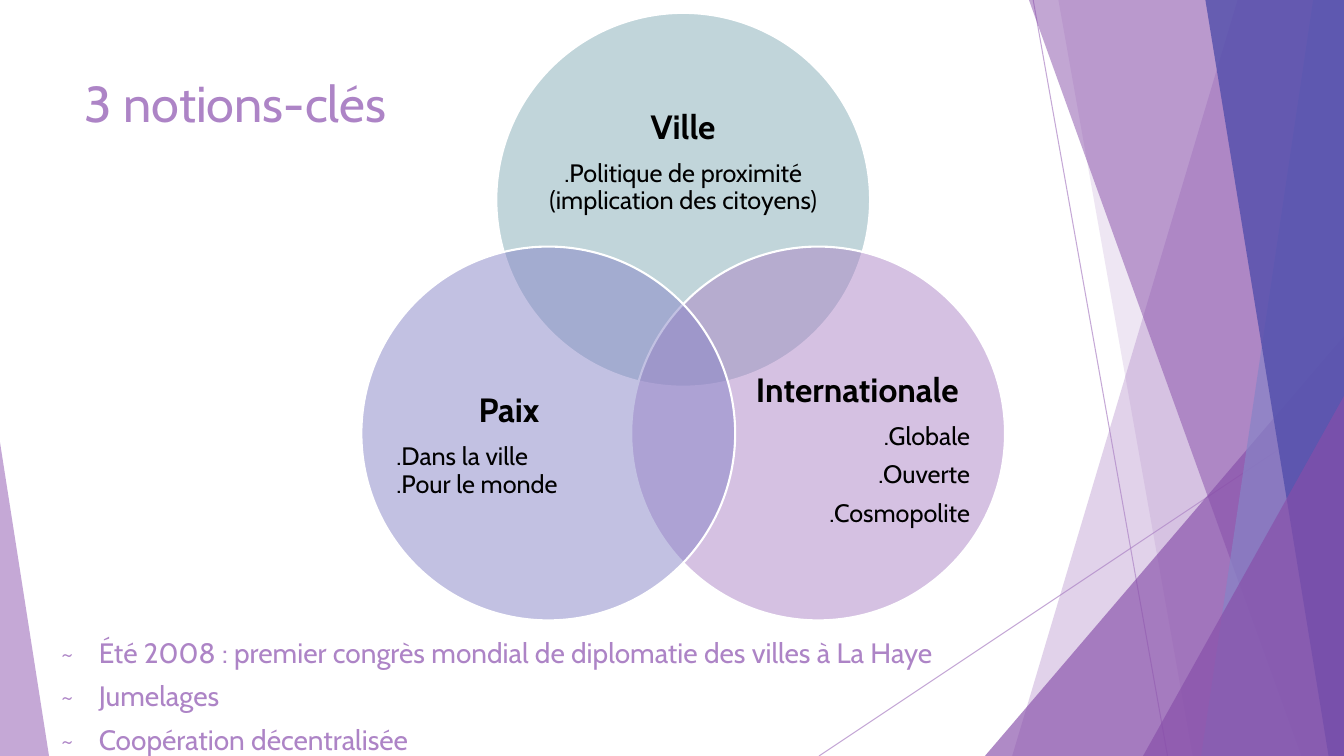
from dataclasses import dataclass
from math import cos, radians, sin

from lxml.etree import SubElement
from pptx import Presentation
from pptx.dml.color import RGBColor
from pptx.enum.shapes import MSO_CONNECTOR as Connector, MSO_SHAPE as Shape
from pptx.enum.text import MSO_ANCHOR as Anchor, PP_ALIGN as Align
from pptx.oxml.ns import qn
from pptx.util import Pt

WIDTH, HEIGHT = 960, 540


@dataclass(frozen=True)
class Theme:
    font: str = "Cabin"
    lilac: str = "AD84C6"
    purple: str = "874EA9"
    periwinkle: str = "8784C7"
    indigo: str = "524EAB"
    teal: str = "84ACB6"
    white: str = "FFFFFF"
    black: str = "000000"
    title: int = 36
    heading: int = 24
    bullet: int = 20
    detail: int = 18


@dataclass(frozen=True)
class Facet:
    points: list[tuple[float, float]]
    color: str
    opacity: int


@dataclass(frozen=True)
class Notion:
    heading: str
    details: list[str]
    color: str
    angle: float
    dx: float
    dy: float
    width: float
    align: Align


T = Theme()


def band(top: float, bottom: float) -> list[tuple[float, float]]:
    return [(top, 0), (WIDTH, 0), (WIDTH, HEIGHT), (bottom, HEIGHT)]


def corner(left: float, top: float) -> list[tuple[float, float]]:
    return [(left, HEIGHT), (WIDTH, top), (WIDTH, HEIGHT)]


RAYS = [((738, 0), (834, HEIGHT)), ((WIDTH, 290), (585, HEIGHT))]
FACETS = [
    Facet(band(884, 723), T.lilac, 36),
    Facet(band(756, 852), T.lilac, 20),
    Facet(corner(703.5, 240), T.purple, 66),
    Facet(band(735, 929.5), T.purple, 50),
    Facet(band(938, 858), T.periwinkle, 70),
    Facet(band(861, 949), T.indigo, 80),
    Facet(corner(816.5, 283), T.purple, 66),
    Facet([(0, HEIGHT), (0, 316), (35, HEIGHT)], T.lilac, 70),
]

VENN_X, VENN_Y, VENN_REACH, DIAMETER = 488, 254, 111.3, 267
LABEL_HEIGHT = 146
NOTIONS = [
    Notion("Ville", [".Politique de proximité (implication des citoyens)"],
           T.teal, -90, 0, -26.5, 196, Align.CENTER),
    Notion("Internationale", [".Globale", ".Ouverte", ".Cosmopolite"],
           T.lilac, 30, 28, 12, 161, Align.RIGHT),
    Notion("Paix", [".Dans la ville\n.Pour le monde"],
           T.periwinkle, 150, -28, 9, 161, Align.LEFT),
]
BULLETS = [
    "Été 2008 : premier congrès mondial de diplomatie des villes à La Haye",
    "Jumelages",
    "Coopération décentralisée",
]


def set_opacity(fill, percent: int) -> None:
    color = fill.find(".//" + qn("a:srgbClr"))
    SubElement(color, qn("a:alpha"), val=str(percent * 1000))


def paint(s, color: str, opacity: int) -> None:
    s.shadow.inherit = False
    s.fill.solid()
    s.fill.fore_color.rgb = RGBColor.from_string(color)
    set_opacity(s._element.spPr.find(qn("a:solidFill")), opacity)


def add_ray(shapes, start: tuple[float, float], end: tuple[float, float]) -> None:
    s = shapes.add_connector(Connector.STRAIGHT, *map(Pt, start + end))
    s.line.width = Pt(0.75)
    s.line.color.rgb = RGBColor.from_string(T.lilac)
    set_opacity(s.line._ln, 70)
    SubElement(s._element.spPr, qn("a:effectLst"))


def add_facet(shapes, facet: Facet) -> None:
    first, *rest = [(Pt(x), Pt(y)) for x, y in facet.points]
    builder = shapes.build_freeform(*first)
    builder.add_line_segments(rest, close=True)
    s = builder.convert_to_shape()
    paint(s, facet.color, facet.opacity)
    s.line.fill.background()


def add_frame(shapes, left: float, top: float, width: float, height: float,
              margins: tuple[float, float] = (0, 0), anchor: Anchor = Anchor.TOP):
    tf = shapes.add_textbox(Pt(left), Pt(top), Pt(width), Pt(height)).text_frame
    tf.word_wrap = True
    tf.vertical_anchor = anchor
    tf.margin_left = tf.margin_right = Pt(margins[0])
    tf.margin_top = tf.margin_bottom = Pt(margins[1])
    return tf


def write(tf, text: str, *, size: int, color: str, bold: bool = False,
          align: Align = Align.LEFT, spacing: float = 1.0, after: float = 0,
          bullet: str = "", indent: float = 0) -> None:
    p = tf.paragraphs[0]
    if p.runs:
        p = tf.add_paragraph()
    p.alignment, p.line_spacing, p.space_after = align, spacing, Pt(after)
    for i, line in enumerate(text.split("\n")):
        if i:
            p.add_line_break()
        r = p.add_run()
        r.text = line
        r.font.name, r.font.size, r.font.bold = T.font, Pt(size), bold
        r.font.color.rgb = RGBColor.from_string(color)
    if bullet:
        pPr = p._p.get_or_add_pPr()
        pPr.set("marL", str(Pt(indent)))
        pPr.set("indent", str(-Pt(indent)))
        SubElement(pPr, qn("a:buFont"), typeface=T.font)
        SubElement(pPr, qn("a:buChar"), char=bullet)


def center(notion: Notion) -> tuple[float, float]:
    angle = radians(notion.angle)
    return VENN_X + VENN_REACH * cos(angle), VENN_Y + VENN_REACH * sin(angle)


def add_circle(shapes, notion: Notion) -> None:
    x, y = center(notion)
    s = shapes.add_shape(Shape.OVAL, Pt(x - DIAMETER / 2), Pt(y - DIAMETER / 2),
                         Pt(DIAMETER), Pt(DIAMETER))
    paint(s, notion.color, 50)
    s.line.color.rgb = RGBColor.from_string(T.white)
    s.line.width = Pt(1.5)


def add_label(shapes, notion: Notion) -> None:
    x, y = center(notion)
    tf = add_frame(shapes, x + notion.dx - notion.width / 2,
                   y + notion.dy - LABEL_HEIGHT / 2,
                   notion.width, LABEL_HEIGHT, anchor=Anchor.MIDDLE)
    write(tf, notion.heading, size=T.heading, color=T.black, bold=True,
          align=Align.CENTER, spacing=0.9, after=10)
    for detail in notion.details:
        write(tf, detail, size=T.detail, color=T.black,
              align=notion.align, spacing=0.9, after=8)


def main() -> None:
    prs = Presentation()
    prs.slide_width, prs.slide_height = Pt(WIDTH), Pt(HEIGHT)
    shapes = prs.slides.add_slide(prs.slide_layouts[6]).shapes
    for start, end in RAYS:
        add_ray(shapes, start, end)
    for facet in FACETS:
        add_facet(shapes, facet)
    for notion in NOTIONS:
        add_circle(shapes, notion)
    for notion in NOTIONS:
        add_label(shapes, notion)
    tf = add_frame(shapes, 36.5, 443, 720, 101.5, margins=(7.2, 3.6))
    for text in BULLETS:
        write(tf, text, size=T.bullet, color=T.lilac, spacing=1.3,
              bullet="~", indent=27)
    tf = add_frame(shapes, 53.5, 48, 677, 104, margins=(7.2, 3.6))
    write(tf, "3 notions-clés", size=T.title, color=T.lilac)
    prs.save("out.pptx")


if __name__ == "__main__":
    main()
